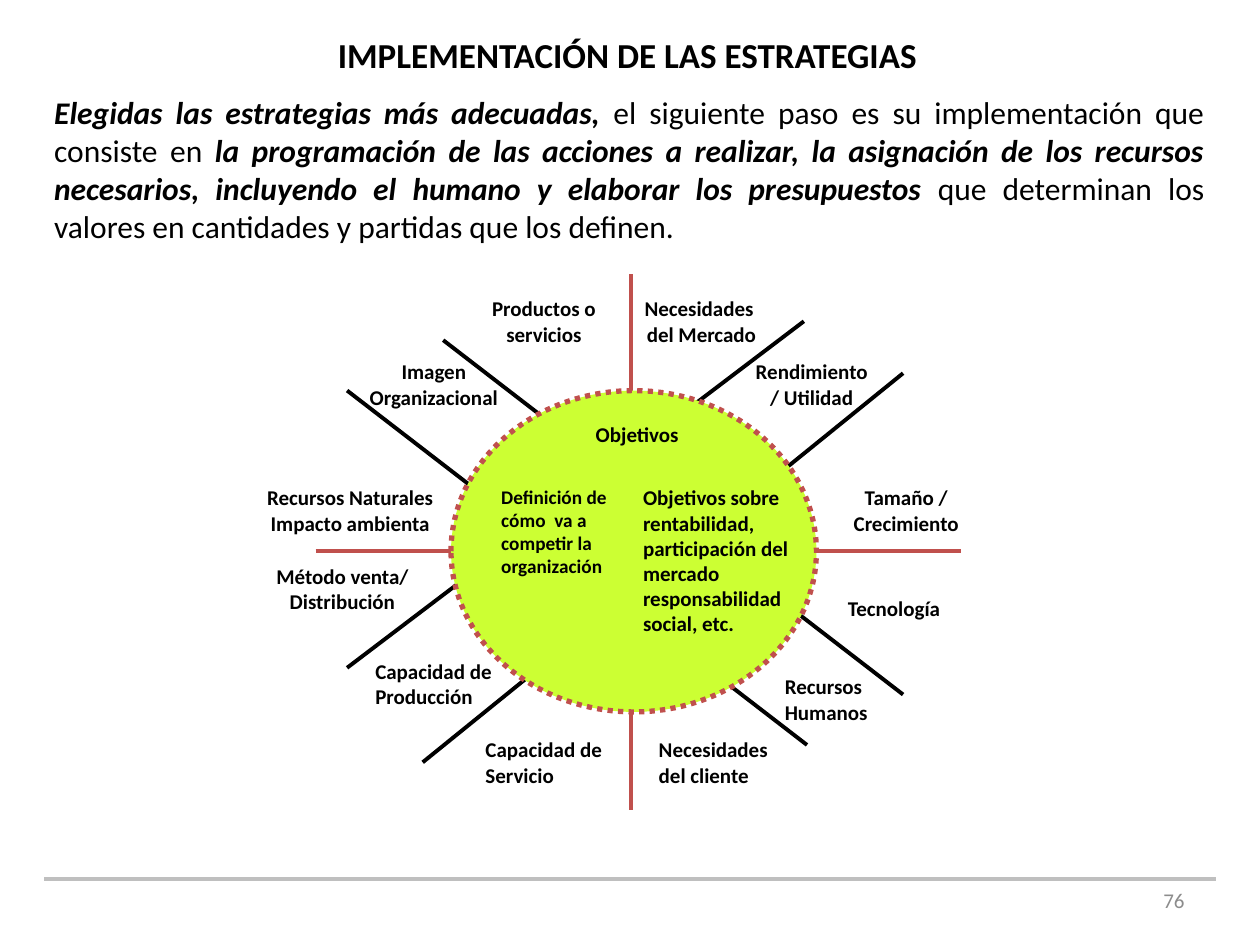
from lxml import etree
from pptx import Presentation
from pptx.dml.color import RGBColor
from pptx.enum.dml import MSO_LINE
from pptx.enum.shapes import MSO_CONNECTOR, MSO_SHAPE
from pptx.enum.text import MSO_ANCHOR, MSO_AUTO_SIZE, PP_ALIGN
from pptx.oxml.ns import qn
from pptx.util import Inches, Pt

LEFT, MID, RIGHT, JUST = PP_ALIGN.LEFT, PP_ALIGN.CENTER, PP_ALIGN.RIGHT, PP_ALIGN.JUSTIFY
HUES = {"ink": "000000", "red": "C0504D", "lime": "CCFF33", "rule": "BFBFBF", "page": "8C8C8C"}
WIDE, HIGH = 10, 7.5
CELL = 0.125  # grid step of the wheel, in inches

INTRO = [
    ("Elegidas las estrategias más adecuadas,", True),
    (" el siguiente paso es su implementación que consiste en ", False),
    ("la programación de las acciones a realizar, la asignación de los recursos "
     "necesarios, incluyendo el humano y elaborar los presupuestos", True),
    (" que determinan los valores en cantidades y partidas que los definen.", False),
]

# Each spoke: start column, row, end column, row, colour
SPOKES = [
    (11.8, 31, 42.3, 6.3, "ink"),
    (7, 25, 36, 3, "ink"),
    (13.1, 4.2, 42.3, 26.7, "ink"),
    (7, 7.4, 36.2, 29.9, "ink"),
    (5, 17.6, 46, 17.6, "red"),
    (25, 0, 25, 34, "red"),
]

# Each label: column, row, columns wide, rows high, alignment, size, words
LABELS = [
    (22, 9, 8, 3, LEFT, 12, "Objetivos"),
    (16, 13, 9, 8, LEFT, 11, "Definición de cómo  va a competir la organización"),
    (25, 13, 11, 10, LEFT, 12,
     "Objetivos sobre rentabilidad, participación del mercado responsabilidad social, etc."),
    (26, 29, 9, 4, LEFT, 12, "Necesidades del cliente"),
    (15, 29, 9, 4, LEFT, 12, "Capacidad de Servicio"),
    (34, 25, 8.6, 4, LEFT, 12, "Recursos\nHumanos"),
    (38, 20, 8.6, 3, LEFT, 12, "Tecnología"),
    (38, 13, 9, 4, MID, 12, "Tamaño / Crecimiento"),
    (32, 5, 9, 4, MID, 12, "Rendimiento / Utilidad"),
    (25, 1, 9, 4, MID, 12, "Necesidades  del Mercado"),
    (15, 1, 9, 4, MID, 12, "Productos o servicios"),
    (7, 5, 11, 4, MID, 12, "Imagen Organizacional"),
    (0.4, 13, 13.6, 4, MID, 12, "Recursos Naturales\nImpacto ambienta"),
    (1.7, 18, 10, 4, MID, 12, "Método venta/ Distribución"),
    (8, 24, 10, 4, LEFT, 12, "Capacidad de Producción"),
]


def paint(font, size, bold=False, hue="ink"):
    font.name, font.size, font.bold = "Calibri", Pt(size), bold
    font.color.rgb = RGBColor.from_string(HUES[hue])


def move(shape, box):
    shape.left, shape.top, shape.width, shape.height = (Inches(n) for n in box)


def add_line(slide, start, end, hue, width):
    line = slide.shapes.add_connector(
        MSO_CONNECTOR.STRAIGHT, *(Inches(n) for n in (*start, *end)))
    line.line.color.rgb = RGBColor.from_string(HUES[hue])
    line.line.width = Pt(width)
    etree.SubElement(line._element.spPr, qn("a:effectLst"))


def add_text(slide, box, words, size, align, bold=True, hue="ink"):
    frame = slide.shapes.add_textbox(*(Inches(n) for n in box)).text_frame
    frame.word_wrap = True
    frame.text = words
    for para in frame.paragraphs:
        para.alignment = align
        for run in para.runs:
            paint(run.font, size, bold, hue)
    return frame


def add_title(slide, box):
    title = slide.shapes.title
    move(title, box)
    frame = title.text_frame
    frame.text = "IMPLEMENTACIÓN DE LAS ESTRATEGIAS"
    frame.word_wrap = False
    frame.auto_size = MSO_AUTO_SIZE.NONE
    para = frame.paragraphs[0]
    para.alignment = MID
    paint(para.runs[0].font, 20, True)


def add_intro(slide, box):
    body = slide.placeholders[1]
    move(body, box)
    frame = body.text_frame
    frame.auto_size = MSO_AUTO_SIZE.NONE
    para = frame.paragraphs[0]
    props = para._p.get_or_add_pPr()
    props.set("marL", "0")
    props.set("indent", "0")
    etree.SubElement(props, qn("a:buNone"))
    para.alignment = JUST
    para.space_before, para.space_after = Pt(0), Pt(6)
    for words, strong in INTRO:
        run = para.add_run()
        run.text = words
        paint(run.font, 18, strong)
        run.font.italic = strong


def add_wheel(slide, left, top):
    """Draw spokes, hub and labels on a grid that starts at left, top."""
    def spot(col, row):
        return left + col * CELL, top + row * CELL

    def area(col, row, cols, rows):
        return (*spot(col, row), cols * CELL, rows * CELL)

    for x1, y1, x2, y2, hue in SPOKES:
        add_line(slide, spot(x1, y1), spot(x2, y2), hue, 2.25)

    hub = slide.shapes.add_shape(
        MSO_SHAPE.OVAL, *(Inches(n) for n in area(13.6, 7.4, 23.2, 20.4)))
    hub.shadow.inherit = False
    hub.fill.solid()
    hub.fill.fore_color.rgb = RGBColor.from_string(HUES["lime"])
    hub.line.color.rgb = RGBColor.from_string(HUES["red"])
    hub.line.width = Pt(3)
    hub.line.dash_style = MSO_LINE.ROUND_DOT

    for *cells, align, size, words in LABELS:
        add_text(slide, area(*cells), words, size, align)


def add_foot(slide, left, top, width):
    add_line(slide, (left, top), (left + width, top), "rule", 2)
    box = (left + width - 2.48, top - 0.03, 2.33, 0.4)
    frame = add_text(slide, box, "76", 12, RIGHT, False, "page")
    frame.vertical_anchor = MSO_ANCHOR.MIDDLE


def main():
    deck = Presentation()
    deck.slide_width, deck.slide_height = Inches(WIDE), Inches(HIGH)
    slide = deck.slides.add_slide(deck.slide_layouts[1])
    add_foot(slide, 0.035 * WIDE, 0.93 * HIGH, 0.93 * WIDE)
    add_title(slide, (2.56, 0.21, 4.84, 0.44))
    add_intro(slide, (0.33, 0.69, 9.33, 1.31))
    add_wheel(slide, 0.188 * WIDE, 0.29 * HIGH)
    deck.save("out.pptx")


if __name__ == "__main__":
    main()
